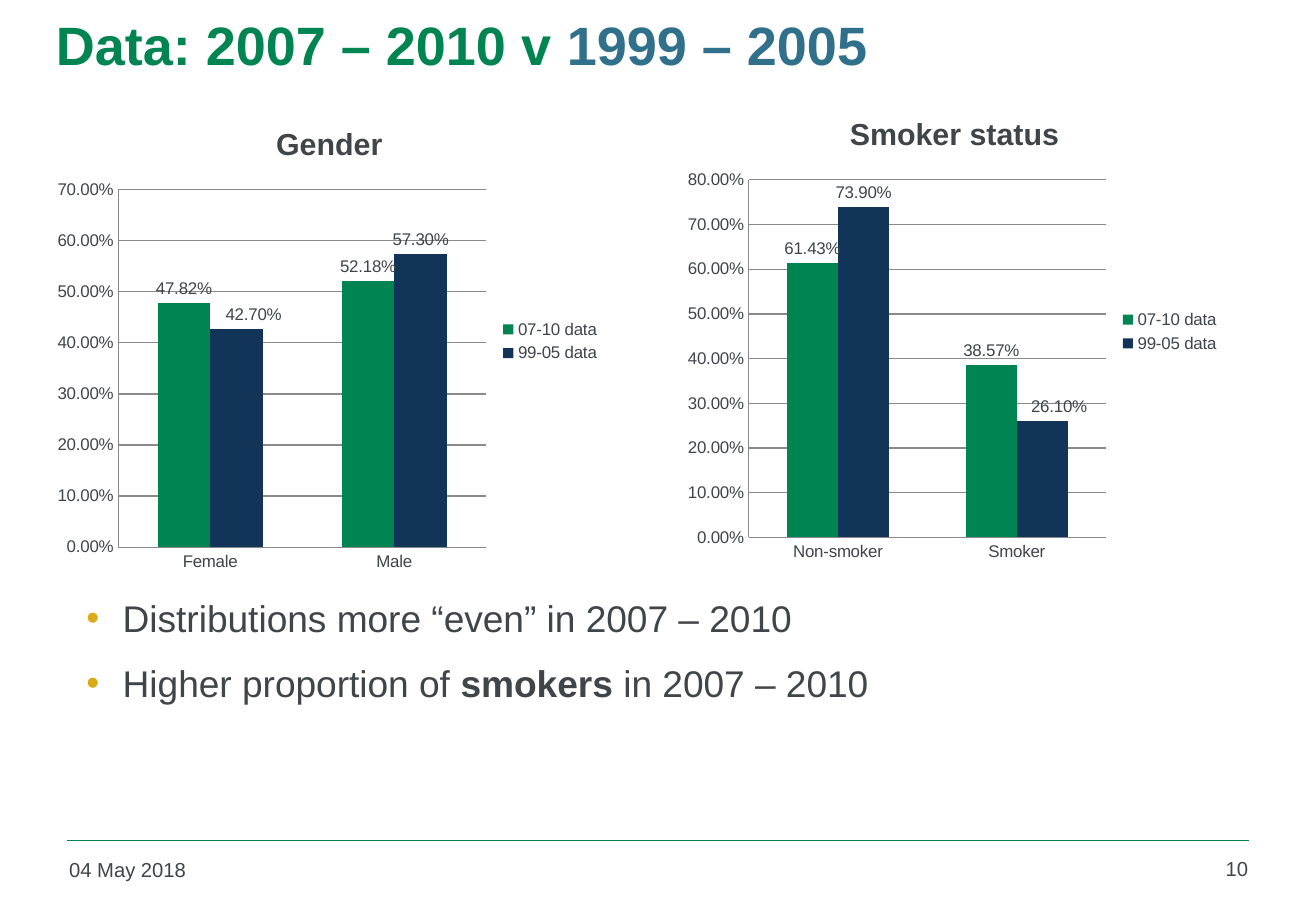
from lxml.etree import SubElement
from pptx import Presentation
from pptx.chart.data import CategoryChartData
from pptx.dml.color import RGBColor
from pptx.enum.chart import XL_CHART_TYPE, XL_LABEL_POSITION, XL_LEGEND_POSITION, XL_TICK_MARK
from pptx.enum.shapes import MSO_CONNECTOR
from pptx.enum.text import MSO_ANCHOR, PP_ALIGN
from pptx.oxml import parse_xml
from pptx.oxml.ns import nsdecls, qn
from pptx.util import Inches, Pt

COLORS = {
    "green": "008452",
    "navy": "113458",
    "blue": "30708A",
    "text": "3F4548",
    "gold": "D9AB16",
    "grid": "8A8A8A",
}
FONT = "Arial"


def area(left, top, width, height):
    """Turn percentages of the slide's size into lengths."""
    return (int(left * column), int(top * row), int(width * column), int(height * row))


def add_span(para, text, size=12, color="text", bold=False):
    span = para.add_run()
    span.text = text
    span.font.name = FONT
    span.font.size = Pt(size)
    span.font.bold = bold
    span.font.color.rgb = RGBColor.from_string(COLORS[color])


deck = Presentation()
deck.slide_width, deck.slide_height = Inches(10.83), Inches(7.5)
column, row = deck.slide_width / 100, deck.slide_height / 100
page = deck.slides.add_slide(deck.slide_layouts[1])

# Footer
rule_left, rule_top, rule_width, _ = area(5.08, 92.27, 89.84, 0)
rule = page.shapes.add_connector(
    MSO_CONNECTOR.STRAIGHT, rule_left, rule_top, rule_left + rule_width, rule_top)
rule.line.color.rgb = RGBColor.from_string(COLORS["green"])
rule.line.width = Pt(1)
SubElement(rule._element.spPr, qn("a:effectLst"))

for text, place, align in [
    ("04 May 2018", (4.34, 93.47, 22.07, 4.8), PP_ALIGN.LEFT),
    ("10", (88.64, 93.33, 7.11, 4.93), PP_ALIGN.RIGHT),
]:
    box = page.shapes.add_textbox(*area(*place))
    box.text_frame.word_wrap = True
    para = box.text_frame.paragraphs[0]
    para.alignment = align
    add_span(para, text)

# Title
title = page.shapes.title
title.left, title.top, title.width, title.height = area(3.32, -2.53, 90.67, 14.67)
title.text_frame.vertical_anchor = MSO_ANCHOR.MIDDLE
para = title.text_frame.paragraphs[0]
para.alignment = PP_ALIGN.LEFT
add_span(para, "Data: 2007 – 2010 v", size=32, color="green", bold=True)
add_span(para, " 1999 – 2005", size=32, color="blue", bold=True)

# Charts: the last number is the point whose label is nudged to the right
for heading, place, categories, recent, earlier, nudged in [
    ("Gender", (3.51, 11.2, 43.03, 52.53),
     ["Female", "Male"], [0.4782, 0.5218], [0.427, 0.573], 0),
    ("Smoker status", (51.43, 10.13, 42.2, 52.53),
     ["Non-smoker", "Smoker"], [0.6143, 0.3857], [0.739, 0.261], 1),
]:
    data = CategoryChartData(number_format="0.00%")
    data.categories = categories
    data.add_series("07-10 data", recent)
    data.add_series("99-05 data", earlier)
    chart = page.shapes.add_chart(XL_CHART_TYPE.COLUMN_CLUSTERED, *area(*place), data).chart
    chart.font.name = FONT
    chart.font.size = Pt(10)
    chart.font.color.rgb = RGBColor.from_string(COLORS["text"])
    chart.has_title = True
    add_span(chart.chart_title.text_frame.paragraphs[0], heading, size=18, bold=True)
    chart.chart_title.include_in_layout = False
    chart.has_legend = True
    chart.legend.position = XL_LEGEND_POSITION.RIGHT
    chart.legend.include_in_layout = False

    values = chart.value_axis
    values.has_major_gridlines = True
    values.tick_labels.number_format = "0.00%"
    values.tick_labels.number_format_is_linked = False
    for axis in (values, chart.category_axis):
        axis.major_tick_mark = axis.minor_tick_mark = XL_TICK_MARK.NONE
    for line in (values.format.line, chart.category_axis.format.line,
                 values.major_gridlines.format.line):
        line.color.rgb = RGBColor.from_string(COLORS["grid"])
        line.width = Pt(0.75)

    plot = chart.plots[0]
    plot.gap_width = 150
    plot.vary_by_categories = False
    for series, color in zip(plot.series, ("green", "navy")):
        series.format.fill.solid()
        series.format.fill.fore_color.rgb = RGBColor.from_string(COLORS[color])
        labels = series.data_labels
        labels.show_value = True
        labels.number_format = "0.00%"
        labels.number_format_is_linked = False
        labels.position = XL_LABEL_POSITION.OUTSIDE_END

    label = plot.series[1].points[nudged].data_label
    label.position = XL_LABEL_POSITION.OUTSIDE_END
    label.font.size = Pt(10)
    label.font.name = FONT
    label.font.color.rgb = RGBColor.from_string(COLORS["text"])
    index = plot.series[1]._element.xpath(".//c:dLbl/c:idx")[0]
    index.addnext(parse_xml(
        f'<c:layout {nsdecls("c")}><c:manualLayout>'
        '<c:x val="0.03"/><c:y val="0"/></c:manualLayout></c:layout>'))

# Findings
body = page.placeholders[1]
body.left, body.top, body.width, body.height = area(5.63, 64.67, 90.12, 15.73)
findings = [
    [("Distributions more “even” in 2007 – 2010", False)],
    [("Higher proportion of ", False), ("smokers", True), (" in 2007 – 2010", False)],
]
for number, spans in enumerate(findings):
    para = body.text_frame.add_paragraph() if number else body.text_frame.paragraphs[0]
    para.space_before = Pt(12 if number else 0)
    properties = para._p.get_or_add_pPr()
    properties.set("marL", str(Inches(0.3)))
    properties.set("indent", str(-Inches(0.3)))
    bullet_color = SubElement(properties, qn("a:buClr"))
    SubElement(bullet_color, qn("a:srgbClr"), val=COLORS["gold"])
    SubElement(properties, qn("a:buFont"), typeface=FONT)
    SubElement(properties, qn("a:buChar"), char="•")
    for text, bold in spans:
        add_span(para, text, size=22, bold=bold)

deck.save("out.pptx")
